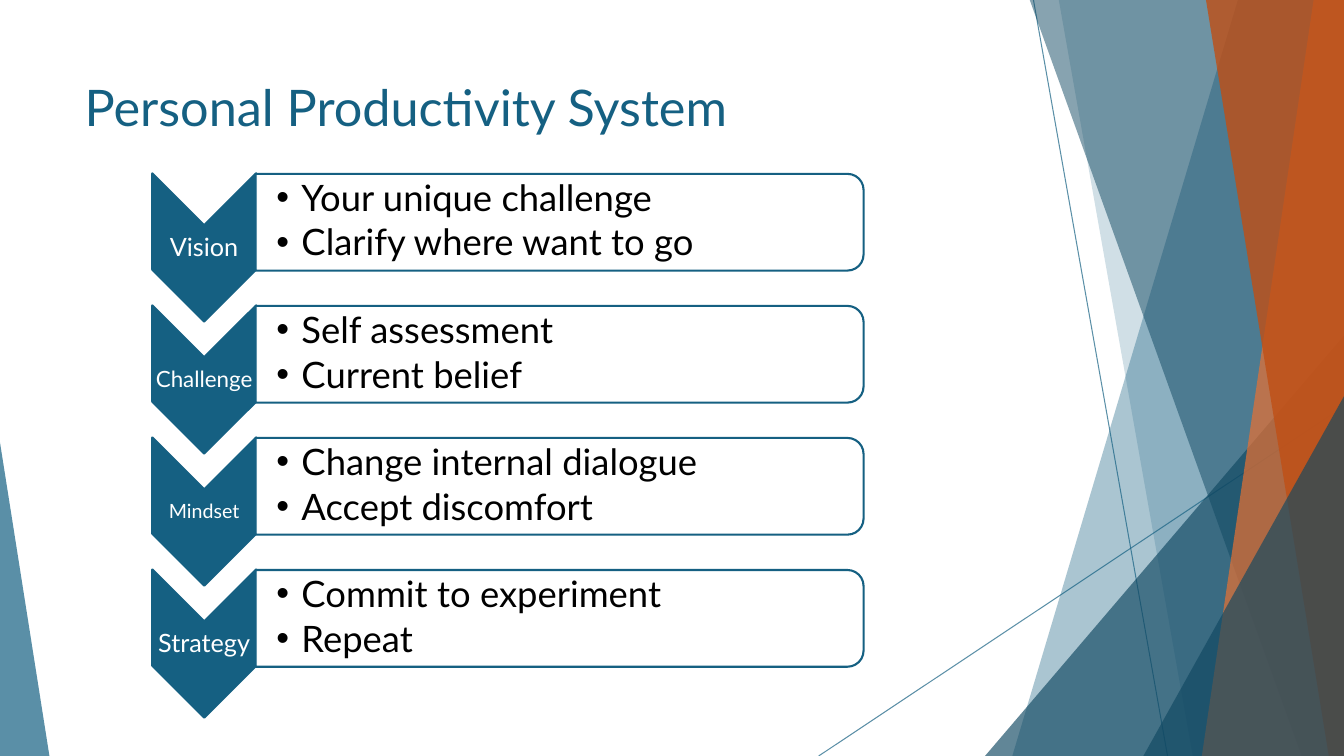
from lxml import etree
from pptx import Presentation
from pptx import util as u
from pptx.dml.color import RGBColor
from pptx.enum import shapes, text
from pptx.oxml.ns import qn

PX = 9144
FONT = "Lato"
COLORS = {"blue": "156082", "navy": "104862", "orange": "E97132",
          "rust": "C04F15", "white": "FFFFFF", "black": "000000"}
STEPS = [
    ("Vision", 18, ["Your unique challenge", "Clarify where want to go"]),
    ("Challenge", 16, ["Self assessment", "Current belief"]),
    ("Mindset", 14, ["Change internal dialogue", "Accept discomfort"]),
    ("Strategy", 18, ["Commit to experiment", "Repeat"]),
]
STEP_PITCH = 131


def px(*lengths):
    return [u.Emu(length * PX) for length in lengths]


def set_all(target, values):
    for name, value in values.items():
        setattr(target, name, value)


def set_color(color_format, name, alpha=100):
    color_format.rgb = RGBColor.from_string(COLORS[name])
    if alpha < 100:
        for element in color_format._xFill.iter(qn("a:srgbClr")):
            etree.SubElement(element, qn("a:alpha"), val=str(alpha * 1000))


def paint(shape, fill, alpha=100, line=None):
    shape.shadow.inherit = False
    shape.fill.solid()
    set_color(shape.fill.fore_color, fill, alpha)
    if line:
        set_color(shape.line.color, line)
        shape.line.width = u.Pt(1.5)
    else:
        shape.line.fill.background()


def style_font(font, size, color):
    set_all(font, {"name": FONT, "size": u.Pt(size)})
    set_color(font.color, color)


def add_ray(slide, start, end):
    connector = slide.shapes.add_connector(
        shapes.MSO_CONNECTOR.STRAIGHT, *px(*start, *end))
    connector.line.width = u.Pt(0.75)
    connector.line.fill.solid()
    set_color(connector.line.fill.fore_color, "blue", 70)
    etree.SubElement(connector._element.spPr, qn("a:effectLst"))


def add_triangle(slide, box, apex, color, alpha):
    triangle = slide.shapes.add_shape(
        shapes.MSO_SHAPE.ISOSCELES_TRIANGLE, *px(*box))
    triangle.adjustments[0] = apex
    paint(triangle, color, alpha)


def add_facets(slide, left, top, width, height):
    right, bottom = left + width, top + height

    def add_band(top_x, bottom_x, color, alpha):
        builder = slide.shapes.build_freeform(left + top_x, top - 1, PX)
        builder.add_line_segments(
            [(right, top - 1), (right, bottom), (left + bottom_x, bottom)])
        paint(builder.convert_to_shape(), color, alpha)

    def add_corner(x, y):
        box = (left + x, top + y, width - x, height - y)
        add_triangle(slide, box, 1, "navy", 66)

    add_ray(slide, (left + 213, top), (left + 346, bottom))
    add_ray(slide, (right, top + 403), (left, bottom))
    add_band(416, 192, "blue", 36)
    add_band(238, 371, "blue", 20)
    add_corner(165, 333)
    add_band(209, 479, "navy", 50)
    add_band(491, 380, "orange", 70)
    add_band(384, 506, "rust", 80)
    add_corner(322, 393)


def add_title(slide, left, top, width, height):
    title = slide.shapes.title
    set_all(title, dict(zip(("left", "top", "width", "height"),
                            px(left, top, width, height))))
    title.text_frame.vertical_anchor = text.MSO_ANCHOR.MIDDLE
    paragraph = title.text_frame.paragraphs[0]
    paragraph.text = "Personal Productivity System"
    paragraph.alignment = text.PP_ALIGN.LEFT
    style_font(paragraph.runs[0].font, 36, "blue")


def add_turned_shape(slide, kind, left, top, width, height):
    shift = (width - height) // 2
    shape = slide.shapes.add_shape(
        kind, *px(left + shift, top - shift, height, width))
    shape.rotation = 90
    return shape


def add_text(slide, box, lines, size, color, margins, format_values,
             bulleted=False):
    frame = slide.shapes.add_textbox(*px(*box)).text_frame
    left_margin, margin = px(*margins)
    set_all(frame, {"word_wrap": True,
                    "vertical_anchor": text.MSO_ANCHOR.MIDDLE,
                    "margin_left": left_margin, "margin_right": margin,
                    "margin_top": margin, "margin_bottom": margin})
    for index, line in enumerate(lines):
        paragraph = frame.add_paragraph() if index else frame.paragraphs[0]
        set_all(paragraph, {"line_spacing": 0.9, **format_values})
        if bulleted:
            properties = paragraph._p.get_or_add_pPr()
            indent = px(25)[0]
            properties.set("marL", str(indent))
            properties.set("indent", str(-indent))
            etree.SubElement(properties, qn("a:buFont"), typeface="Arial")
            etree.SubElement(properties, qn("a:buChar"), char="•")
        run = paragraph.add_run()
        run.text = line
        style_font(run.font, size, color)


def add_step(slide, left, top, width, height, label, label_size, points):
    arrow_width, panel_height = 103, 96
    arrow = add_turned_shape(slide, shapes.MSO_SHAPE.CHEVRON,
                             left, top, arrow_width, height)
    paint(arrow, "blue", line="blue")
    add_text(slide, (left, top + 52, arrow_width, 44), [label], label_size,
             "white", (1, 1), {"alignment": text.PP_ALIGN.CENTER})
    panel_left = left + arrow_width
    panel_width = width - arrow_width
    panel = add_turned_shape(slide, shapes.MSO_SHAPE.ROUND_2_SAME_RECTANGLE,
                             panel_left, top, panel_width, panel_height)
    paint(panel, "white", 90, "blue")
    add_text(slide, (panel_left, top + 5, panel_width - 4, 86), points, 26,
             "black", (20, 2), {"level": 1, "space_after": u.Pt(4)}, True)


def main():
    presentation = Presentation()
    presentation.slide_width, presentation.slide_height = px(1333, 750)
    slide = presentation.slides.add_slide(presentation.slide_layouts[5])
    add_facets(slide, 812, 0, 521, 750)
    add_triangle(slide, (0, 439, 49, 311), 0, "blue", 70)
    add_title(slide, 74, 67, 940, 76)
    for index, step in enumerate(STEPS):
        add_step(slide, 151, 172 + index * STEP_PITCH, 706, 147, *step)
    presentation.save("out.pptx")


if __name__ == "__main__":
    main()
